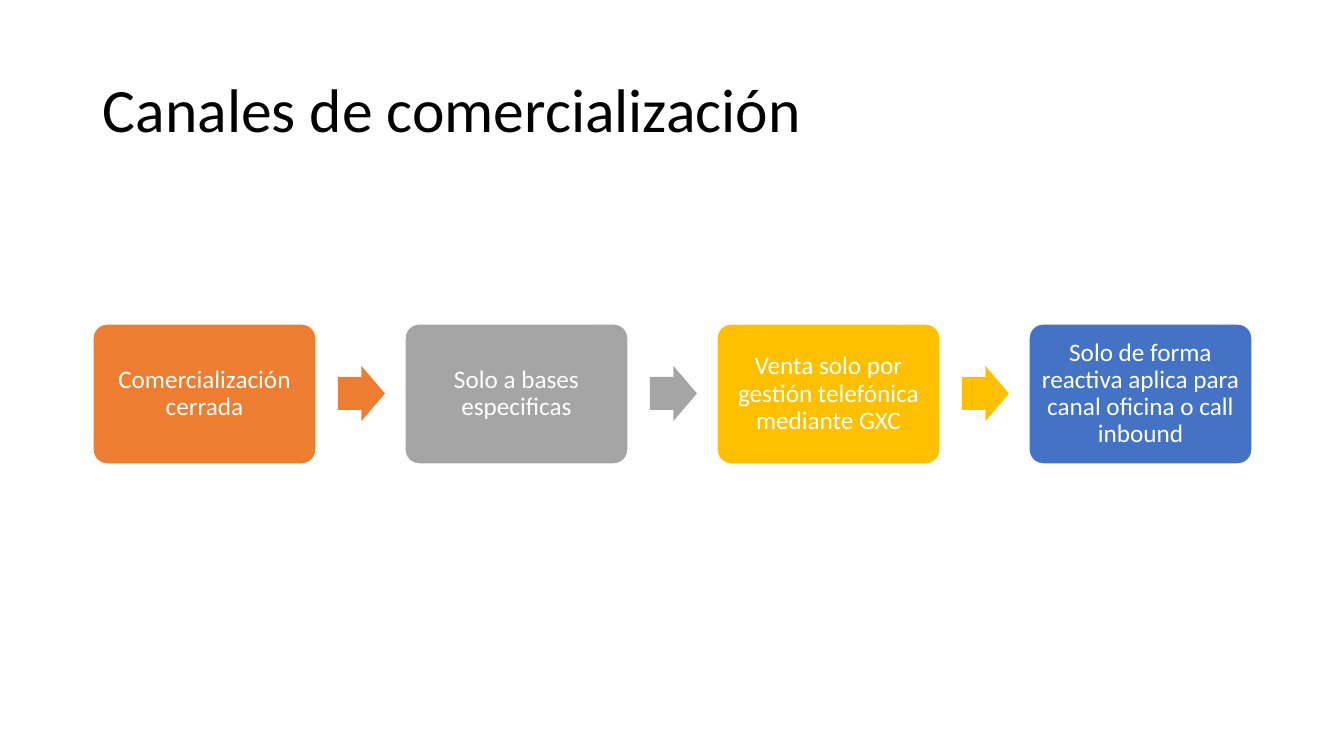
import pptx
import pptx.util
import pptx.dml.color
import pptx.enum.shapes
import pptx.enum.text

RGBColor = pptx.dml.color.RGBColor
Shape = pptx.enum.shapes.MSO_SHAPE
Align = pptx.enum.text.PP_ALIGN

BLACK = RGBColor(0x00, 0x00, 0x00)
WHITE = RGBColor(0xFF, 0xFF, 0xFF)
ORANGE = RGBColor(0xED, 0x7D, 0x31)
GRAY = RGBColor(0xA5, 0xA5, 0xA5)
GOLD = RGBColor(0xFF, 0xC0, 0x00)
BLUE = RGBColor(0x44, 0x72, 0xC4)

STEPS = [
    ("Comercialización cerrada", ORANGE),
    ("Solo a bases especificas", GRAY),
    ("Venta solo por gestión telefónica mediante GXC", GOLD),
    ("Solo de forma reactiva aplica para canal oficina o call inbound", BLUE),
]
LEFT, STEP_PITCH = 93, 312


def px(length):
    """Turn pixels into EMU, at 1344 px across a 13.33 inch slide."""
    return pptx.util.Emu(round(length * 12192000 / 1344))


def write(shape, text, size, color, align, inset):
    """Fill a shape with one wrapped, vertically centred paragraph."""
    frame = shape.text_frame
    frame.word_wrap = True
    frame.vertical_anchor = pptx.enum.text.MSO_ANCHOR.MIDDLE
    frame.margin_left = frame.margin_right = px(inset)
    frame.margin_top = frame.margin_bottom = px(7)
    para = frame.paragraphs[0]
    para.text = text
    para.alignment = align
    para.line_spacing = 0.9
    para.font.name = "Calibri"
    para.font.size = pptx.util.Pt(size)
    para.font.color.rgb = color


deck = pptx.Presentation()
deck.slide_width, deck.slide_height = px(1344), px(756)
page = deck.slides.add_slide(deck.slide_layouts[6])

title = page.shapes.add_textbox(px(LEFT), px(40), px(1159), px(146))
write(title, "Canales de comercialización", 44, BLACK, Align.LEFT, 10)

for index, (text, color) in enumerate(STEPS):
    left = LEFT + index * STEP_PITCH
    box = page.shapes.add_shape(
        Shape.ROUNDED_RECTANGLE, px(left), px(324), px(223), px(140))
    box.adjustments[0] = 0.1
    box.shadow.inherit = False
    box.fill.solid()
    box.fill.fore_color.rgb = color
    box.line.color.rgb = WHITE
    box.line.width = pptx.util.Pt(1)
    write(box, text, 18, WHITE, Align.CENTER, 7)

    if index < len(STEPS) - 1:
        arrow = page.shapes.add_shape(
            Shape.RIGHT_ARROW, px(left + 245), px(366), px(47), px(55))
        arrow.adjustments[0] = 0.6
        arrow.adjustments[1] = 0.5
        arrow.shadow.inherit = False
        arrow.fill.solid()
        arrow.fill.fore_color.rgb = color
        arrow.line.fill.background()

deck.save("out.pptx")
